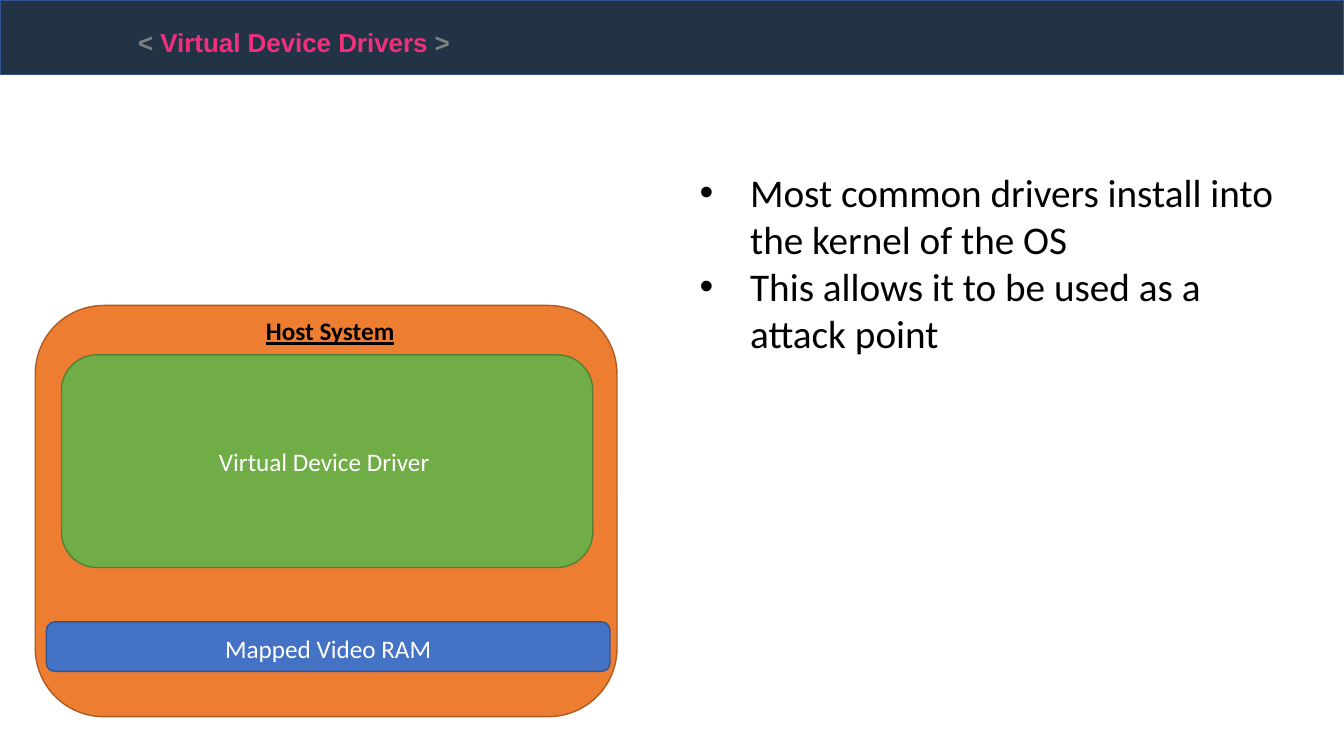
import pptx
import pptx.dml.color
import pptx.enum.shapes
import pptx.enum.text
import pptx.oxml.ns
import pptx.util
from dataclasses import dataclass
from lxml import etree

Inches = pptx.util.Inches
Pt = pptx.util.Pt
Anchor = pptx.enum.text.MSO_ANCHOR
Align = pptx.enum.text.PP_ALIGN
Shape = pptx.enum.shapes.MSO_SHAPE


@dataclass(frozen=True)
class Theme:
    navy: str = "223346"
    pink: str = "F1307C"
    gray: str = "808080"
    black: str = "000000"
    white: str = "FFFFFF"
    orange: str = "ED7D31"
    rust: str = "AF5C24"
    green: str = "70AD47"
    moss: str = "538035"
    blue: str = "4472C4"
    edge: str = "325491"
    head: str = "Arial"
    body: str = "Calibri"
    title: int = 32
    list: int = 28
    label: int = 18


THEME = Theme()


def color(code):
    return pptx.dml.color.RGBColor.from_string(code)


def place(item, box):
    item.left, item.top, item.width, item.height = map(Inches, box)


def style(font, name, size, code=None):
    font.name, font.size = name, Pt(size)
    if code:
        font.color.rgb = color(code)


def panel(slide, kind, box, fill, line):
    item = slide.shapes.add_shape(kind, *map(Inches, box))
    item.shadow.inherit = False
    item.fill.solid()
    item.fill.fore_color.rgb = color(fill)
    item.line.color.rgb = color(line)
    item.line.width = Pt(1)
    return item


def label(item, text, anchor):
    frame = item.text_frame
    frame.word_wrap = True
    frame.vertical_anchor = anchor
    para = frame.paragraphs[0]
    para.text = text
    para.alignment = Align.CENTER
    style(para.font, THEME.body, THEME.label, THEME.white)
    return para


def header(slide, box):
    """Draw the banner and set the raised title in front of it."""
    left, top, width, height = box
    panel(slide, Shape.RECTANGLE, box, THEME.navy, THEME.edge)
    title = slide.shapes.title
    slide.shapes._spTree.append(title._element)
    place(title, (left + 1.27, top + 0.16, 3.8, 0.64))
    frame = title.text_frame
    frame.word_wrap = True
    frame.auto_size = pptx.enum.text.MSO_AUTO_SIZE.NONE
    frame.vertical_anchor = Anchor.TOP
    para = frame.paragraphs[0]
    para.alignment = Align.LEFT
    style(para.font, THEME.head, THEME.title)
    para.font.bold = True
    parts = (("< ", THEME.gray), ("Virtual Device Drivers ", THEME.pink),
             (">", THEME.gray))
    for text, code in parts:
        run = para.add_run()
        run.text = text
        style(run.font, THEME.head, THEME.title, code)
        run.font.bold = True
        run._r.get_or_add_rPr().set("baseline", "30000")


def host(slide, box):
    """Draw the host system with its driver and video memory."""
    left, top, width, height = box
    panel(slide, Shape.ROUNDED_RECTANGLE, box, THEME.orange, THEME.rust)
    driver = panel(slide, Shape.ROUNDED_RECTANGLE,
                   (left + 0.26, top + 0.49, width - 0.5, 2.11),
                   THEME.green, THEME.moss)
    label(driver, "Virtual Device Driver ", Anchor.MIDDLE)
    video = panel(slide, Shape.ROUNDED_RECTANGLE,
                  (left + 0.11, top + 3.14, width - 0.18, 0.49),
                  THEME.blue, THEME.edge)
    label(video, "Mapped Video RAM", Anchor.BOTTOM)
    name = slide.shapes.add_textbox(
        *map(Inches, (left + 0.48, top + 0.05, width - 0.88, 0.4)))
    para = label(name, "Host System", Anchor.TOP)
    para.font.color.rgb = color(THEME.black)
    para.font.bold = para.font.underline = True


def bullet(para):
    props = para._p.get_or_add_pPr()
    props.set("marL", str(Inches(0.5)))
    props.set("indent", str(Inches(-0.5)))
    for tag, key, value in (("a:buFont", "typeface", THEME.head),
                            ("a:buChar", "char", "•")):
        etree.SubElement(props, pptx.oxml.ns.qn(tag)).set(key, value)


def points(slide, box, lines):
    body = slide.placeholders[1]
    slide.shapes._spTree.append(body._element)
    place(body, box)
    frame = body.text_frame
    frame.word_wrap = True
    frame.auto_size = pptx.enum.text.MSO_AUTO_SIZE.NONE
    frame.vertical_anchor = Anchor.TOP
    frame.text = "\n".join(lines)
    for para in frame.paragraphs:
        bullet(para)
        para.space_before = Pt(0)
        style(para.font, THEME.body, THEME.list, THEME.black)


def main():
    deck = pptx.Presentation()
    deck.slide_width, deck.slide_height = Inches(13.33), Inches(7.5)
    slide = deck.slides.add_slide(deck.slide_layouts[1])
    header(slide, (0, 0, 13.33, 0.74))
    host(slide, (0.35, 3.03, 5.77, 4.08))
    points(slide, (6.84, 1.62, 6.06, 3.4), (
        "Most common drivers install into the kernel of the OS",
        "This allows it to be used as a attack point"))
    deck.save("out.pptx")


if __name__ == "__main__":
    main()
